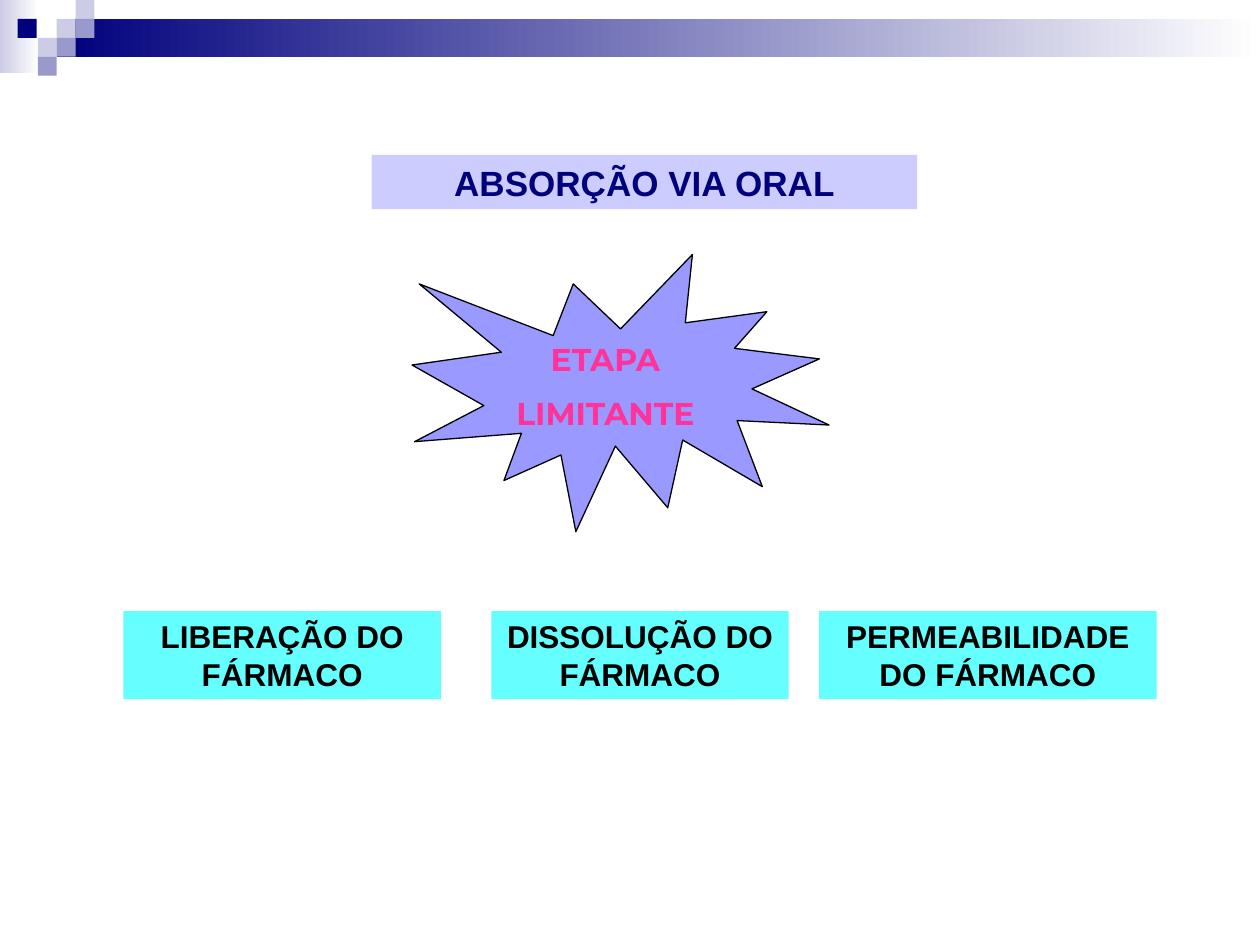
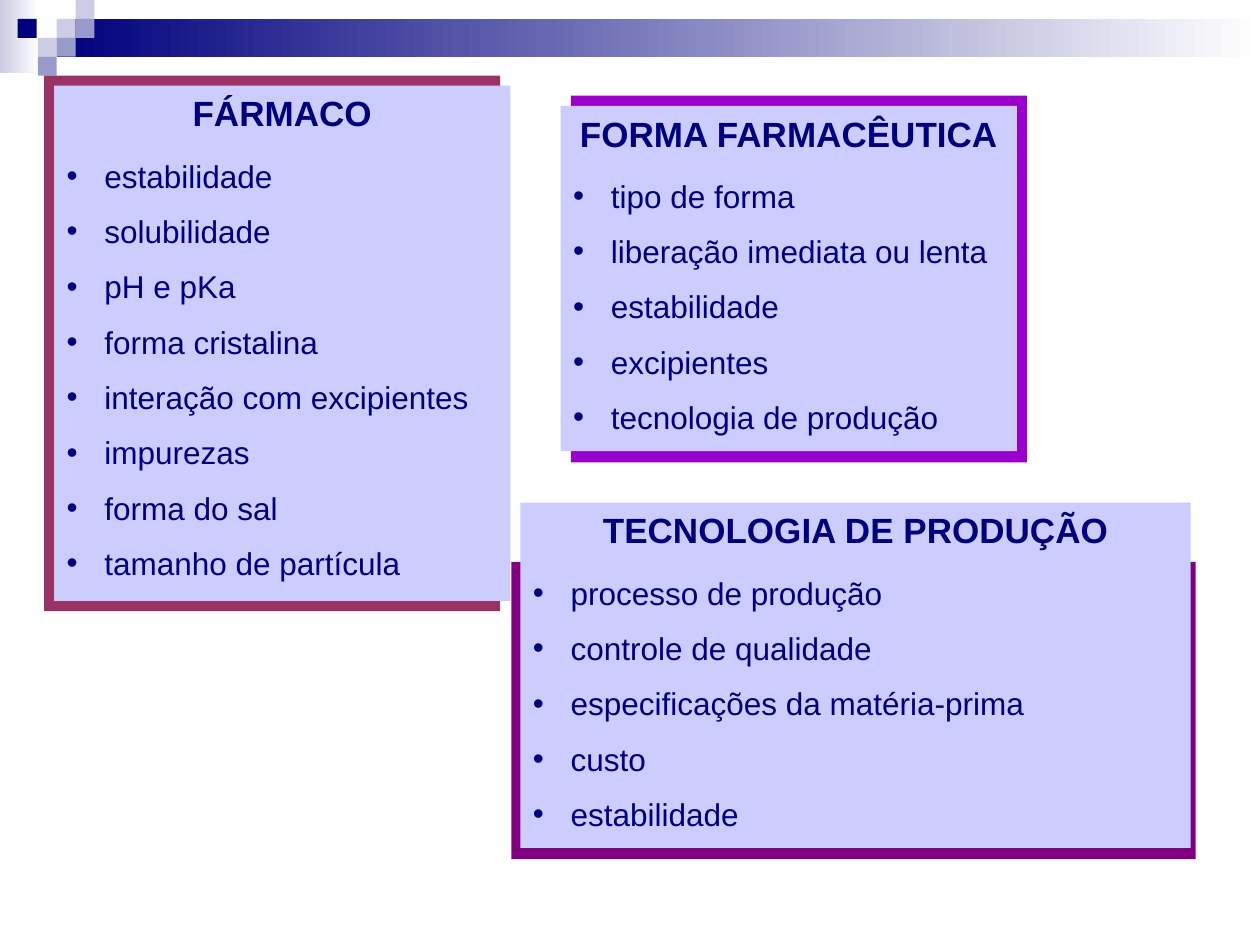
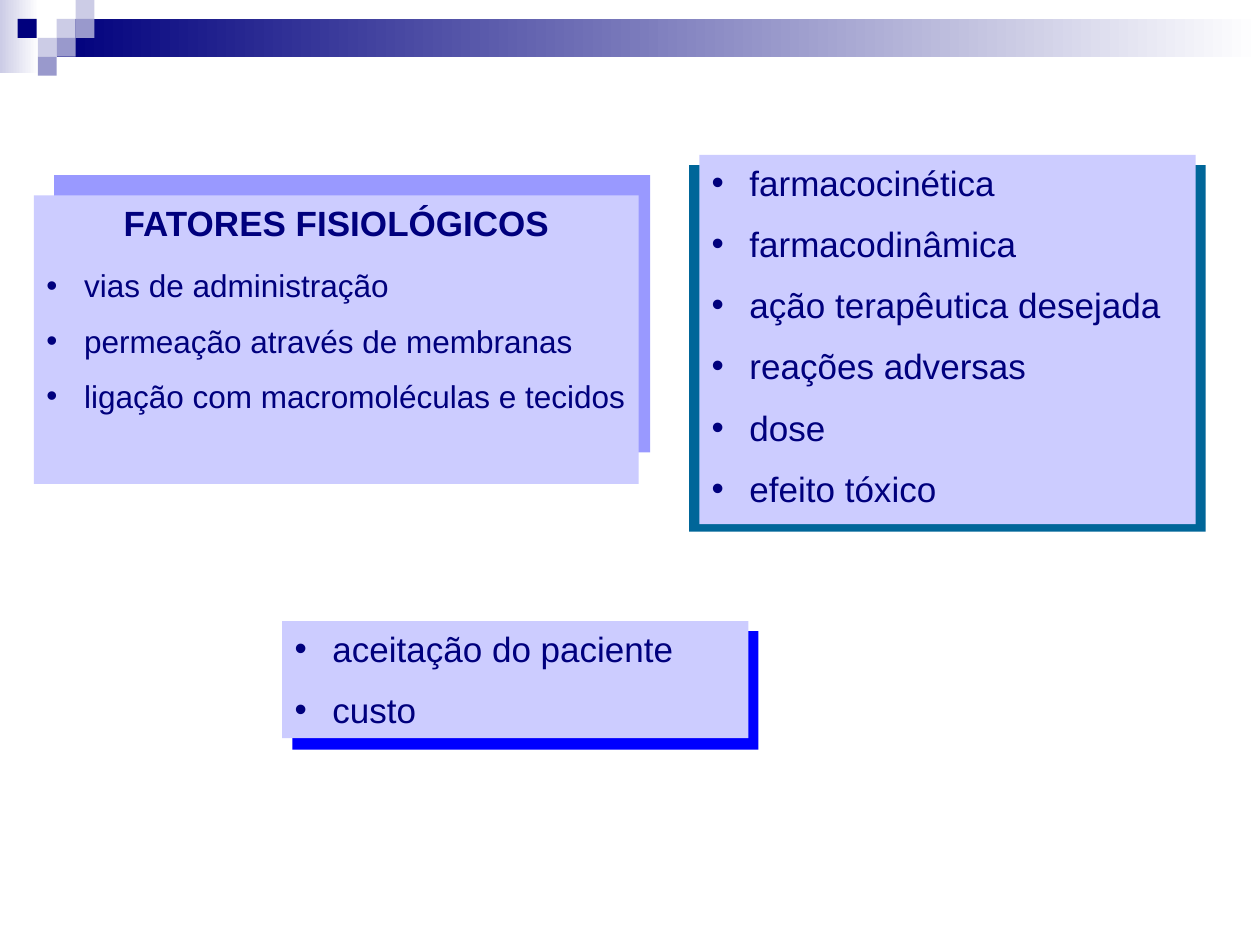
from lxml import etree
from pptx import Presentation
from pptx.dml.color import RGBColor
from pptx.enum.shapes import MSO_SHAPE
from pptx.enum.text import MSO_ANCHOR, PP_ALIGN
from pptx.oxml.ns import qn
from pptx.util import Inches, Pt

RECT = MSO_SHAPE.RECTANGLE
BURST = MSO_SHAPE.EXPLOSION1
TOP = MSO_ANCHOR.TOP
LEFT, MID = PP_ALIGN.LEFT, PP_ALIGN.CENTER

NAVY = RGBColor(0x00, 0x00, 0x7D)
PALE = RGBColor(0xCC, 0xCC, 0xE6)
SLATE = RGBColor(0x99, 0x99, 0xCC)
LILAC = RGBColor(0xCC, 0xCC, 0xFF)
MAUVE = RGBColor(0x99, 0x99, 0xFF)
AQUA = RGBColor(0x66, 0xFF, 0xFF)
PINK = RGBColor(0xFF, 0x33, 0x99)
WINE = RGBColor(0x99, 0x33, 0x66)
VIOLET = RGBColor(0x99, 0x00, 0xCC)
PURPLE = RGBColor(0x80, 0x00, 0x80)
BLUE = RGBColor(0x00, 0x00, 0xFF)
TEAL = RGBColor(0x00, 0x66, 0x99)
BLACK = RGBColor(0x00, 0x00, 0x00)
WHITE = RGBColor(0xFF, 0xFF, 0xFF)


def add_box(slide, at, fill, kind=RECT):
    """Add a borderless shape; a list of two colours makes a gradient."""
    box = slide.shapes.add_shape(kind, *[Inches(n) for n in at])
    box.shadow.inherit = False
    box.line.fill.background()
    if isinstance(fill, list):
        box.fill.gradient()
        box.fill.gradient_angle = 0
        for stop, color in zip(box.fill.gradient_stops, fill):
            stop.color.rgb = color
    else:
        box.fill.solid()
        box.fill.fore_color.rgb = fill
    return box


def add_line(box, text, size, color=NAVY, bold=False, bullet=False, gap=0, font="Arial"):
    """Write the next paragraph of a box, starting with its empty first one."""
    frame = box.text_frame
    frame.word_wrap = True
    frame.vertical_anchor = TOP
    para = frame.paragraphs[0]
    if para.runs:
        para = frame.add_paragraph()
    para.alignment = LEFT if bullet else MID
    para.space_before = Pt(gap)
    run = para.add_run()
    run.text = text
    run.font.name = font
    run.font.size = Pt(size)
    run.font.bold = bold
    run.font.color.rgb = color
    if bullet:
        props = para._p.get_or_add_pPr()
        props.set("marL", str(Inches(0.3)))
        props.set("indent", str(-Inches(0.3)))
        etree.SubElement(props, qn("a:buFont")).set("typeface", "Arial")
        etree.SubElement(props, qn("a:buChar")).set("char", "•")


deck = Presentation()
deck.slide_width, deck.slide_height = Inches(10), Inches(7.5)
blank = deck.slide_layouts[6]

# Slide 1: limiting step; its band moves to the layout that all slides share
slide = deck.slides.add_slide(blank)
band = [
    ((0, 0, 0.31, 0.58), [PALE, WHITE]),
    ((0.45, 0.15, 9.55, 0.3), [NAVY, WHITE]),
]
tiles = [
    (0.45, 0.15, PALE), (0.6, 0, PALE), (0.6, 0.15, SLATE), (0.3, 0.3, PALE),
    (0.14, 0.15, NAVY), (0.45, 0.3, SLATE), (0.3, 0.45, SLATE),
]
band += [((x, y, 0.15, 0.15), color) for x, y, color in tiles]
for at, fill in band:
    blank.shapes.element.append(add_box(slide, at, fill).element)

title = add_box(slide, (2.95, 1.23, 4.33, 0.43), LILAC)
add_line(title, "ABSORÇÃO VIA ORAL", 20, bold=True)

steps = [
    (0.98, 2.52, "LIBERAÇÃO DO FÁRMACO"),
    (3.9, 2.36, "DISSOLUÇÃO DO FÁRMACO"),
    (6.5, 2.68, "PERMEABILIDADE DO FÁRMACO"),
]
for x, width, text in steps:
    step = add_box(slide, (x, 4.85, width, 0.7), AQUA)
    add_line(step, text, 18, BLACK, bold=True)

burst = add_box(slide, (3.27, 2.02, 3.31, 2.2), MAUVE, BURST)
burst.line.color.rgb = BLACK
burst.line.width = Pt(0.75)
label = slide.shapes.add_textbox(Inches(3.82), Inches(2.65), Inches(1.97), Inches(0.85))
for text, gap in [("ETAPA", 0), ("LIMITANTE", 9)]:
    add_line(label, text, 18, PINK, bold=True, gap=gap, font="Montserrat")

# Slides 2 and 3: cards as (back, back colour, front, heading, items)
pages = [
    [
        ((0.35, 0.6, 3.62, 4.25), WINE, (0.43, 0.68, 3.62, 4.09), "FÁRMACO",
         ["estabilidade", "solubilidade", "pH e pKa", "forma cristalina",
          "interação com excipientes", "impurezas", "forma do sal",
          "tamanho de partícula"]),
        ((4.53, 0.76, 3.62, 2.91), VIOLET, (4.45, 0.84, 3.62, 2.74), "FORMA FARMACÊUTICA",
         ["tipo de forma", "liberação imediata ou lenta", "estabilidade",
          "excipientes", "tecnologia de produção"]),
        ((4.06, 4.46, 5.43, 2.36), PURPLE, (4.13, 3.99, 5.32, 2.74), "TECNOLOGIA DE PRODUÇÃO",
         ["processo de produção", "controle de qualidade",
          "especificações da matéria-prima", "custo", "estabilidade"]),
    ],
    [
        ((0.43, 1.39, 4.73, 2.2), MAUVE, (0.27, 1.55, 4.8, 2.29), "FATORES FISIOLÓGICOS",
         ["vias de administração", "permeação através de membranas",
          "ligação com macromoléculas e tecidos"]),
        ((2.32, 5.01, 3.7, 0.94), BLUE, (2.24, 4.93, 3.7, 0.93), None,
         ["aceitação do paciente", "custo"]),
        ((5.47, 1.31, 4.1, 2.91), TEAL, (5.55, 1.23, 3.94, 2.93), None,
         ["farmacocinética", "farmacodinâmica", "ação terapêutica desejada",
          "reações adversas", "dose", "efeito tóxico"]),
    ],
]
for cards in pages:
    slide = deck.slides.add_slide(blank)
    for back, color, front, head, items in cards:
        add_box(slide, back, color)
        card = add_box(slide, front, LILAC)
        size, first, rest = (18, 13, 10) if head else (20, 0, 11)
        if head:
            add_line(card, head, 20, bold=True)
        for i, item in enumerate(items):
            add_line(card, item, size, bullet=True, gap=rest if i else first)

deck.save("out.pptx")
